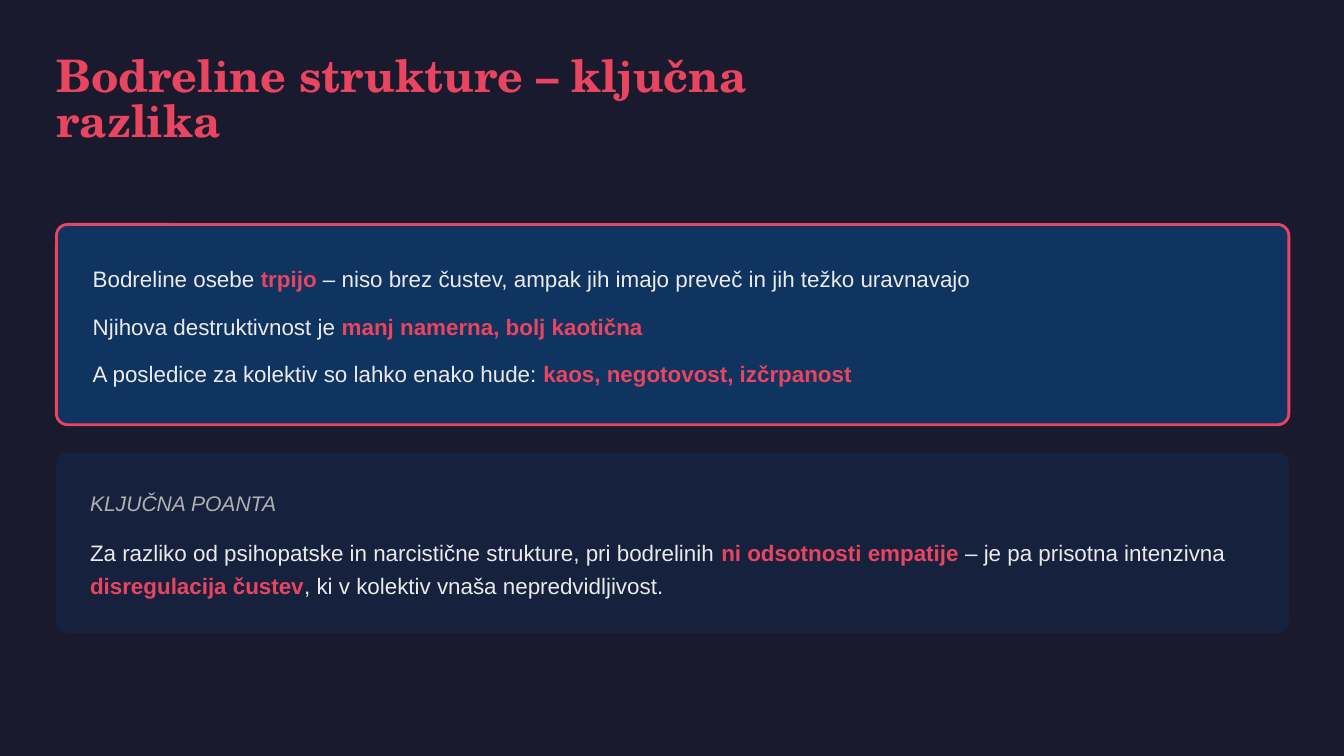
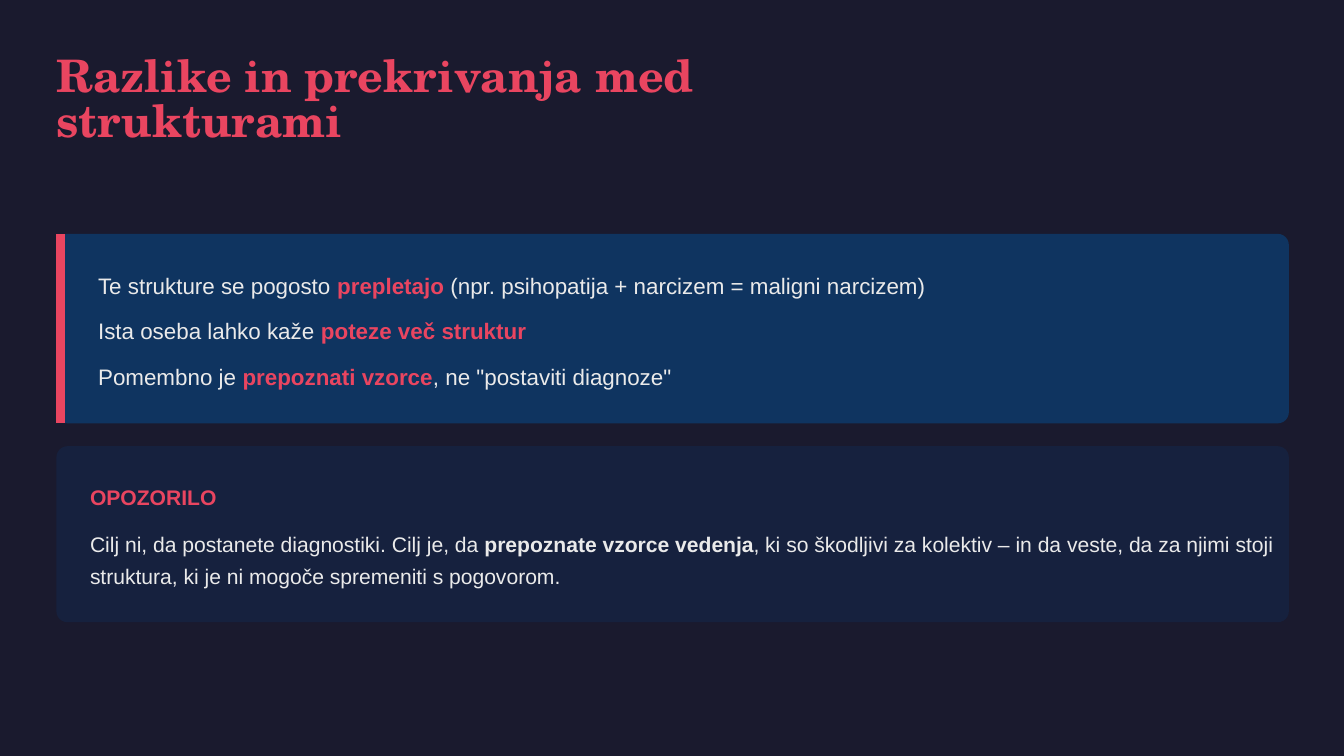
from pptx import Presentation
from pptx.dml.color import RGBColor as RGB
from pptx.enum.shapes import MSO_CONNECTOR as Link, MSO_SHAPE as Shape
from pptx.util import Inches, Pt
from lxml import etree

HUES = {"back": "1A1A2E", "red": "E94560", "blue": "0F3460",
        "navy": "16213E", "light": "EAEAEA", "grey": "B0B0B0"}
LEFT, WIDE, RADIUS = 0.42, 9.17, 0.083

# Widescreen 16:9
deck = Presentation()
deck.slide_width = Inches(10)
deck.slide_height = Inches(10 * 9 / 16)


def write(slide, box, text, size, lead, after=0, hue="light", mark="red", face="Arial"):
    """Add a text box; parts between asterisks are bold in the mark colour."""
    frame = slide.shapes.add_textbox(*map(Inches, box)).text_frame
    frame.word_wrap = True
    frame.margin_left = frame.margin_right = 0
    frame.margin_top = frame.margin_bottom = 0
    para = frame.paragraphs[0]
    para.line_spacing, para.space_after = Pt(lead), Pt(after)
    para.font.name, para.font.size = face, Pt(size)
    for i, part in enumerate(text.split("*")):
        if part:
            run = para.add_run()
            run.text = part
            run.font.bold = i % 2 == 1
            run.font.color.rgb = RGB.from_string(HUES[mark if i % 2 else hue])
    return para


def card(slide, top, high, hue):
    """Add a full-width rounded panel."""
    box = slide.shapes.add_shape(
        Shape.ROUNDED_RECTANGLE, *map(Inches, (LEFT, top, WIDE, high)))
    box.adjustments[0] = RADIUS / high
    box.shadow.inherit = False
    box.fill.solid()
    box.fill.fore_color.rgb = RGB.from_string(HUES[hue])
    box.line.fill.background()
    return box


pages = [
    {"title": "Bodreline strukture – ključna razlika", "width": 5.42,
     "card": (1.67, 1.49), "text": (0.69, 1.94, 8.8), "last": 2.65, "after": 9,
     "lines": [
         "Bodreline osebe *trpijo* – niso brez čustev, ampak jih imajo preveč in jih težko uravnavajo",
         "Njihova destruktivnost je *manj namerna, bolj kaotična*",
         "A posledice za kolektiv so lahko enako hude: *kaos, negotovost, izčrpanost*"],
     "note": (3.37, 1.34), "head": "KLJUČNA POANTA",
     "size": 12, "lead": 18, "high": 0.5, "mark": "red",
     "body": "Za razliko od psihopatske in narcistične strukture, pri bodrelinih "
             "*ni odsotnosti empatije* – je pa prisotna intenzivna "
             "*disregulacija čustev*, ki v kolektiv vnaša nepredvidljivost."},
    {"title": "Razlike in prekrivanja med strukturami", "width": 5.85,
     "card": (1.74, 1.41), "text": (0.73, 1.99, 8.78), "last": 2.67, "after": 7.5,
     "lines": [
         "Te strukture se pogosto *prepletajo* (npr. psihopatija + narcizem = maligni narcizem)",
         "Ista oseba lahko kaže *poteze več struktur*",
         "Pomembno je *prepoznati vzorce*, ne \"postaviti diagnoze\""],
     "note": (3.32, 1.31), "head": "*OPOZORILO*",
     "size": 11.25, "lead": 16.9, "high": 0.47, "mark": "light",
     "body": "Cilj ni, da postanete diagnostiki. Cilj je, da "
             "*prepoznate vzorce vedenja*, ki so škodljivi za kolektiv – in da veste, "
             "da za njimi stoji struktura, ki je ni mogoče spremeniti s pogovorom."},
]

for num, page in enumerate(pages):
    slide = deck.slides.add_slide(deck.slide_layouts[6])
    slide.background.fill.solid()
    slide.background.fill.fore_color.rgb = RGB.from_string(HUES["back"])

    # Title
    write(slide, (LEFT, 0.42, page["width"], 0.33), f"*{page['title']}*",
          24, 24, 18, face="TeX Gyre Schola")

    # Main card: red outline on the first slide, red left bar on the second
    top, high = page["card"]
    main = card(slide, top, high, "blue")
    if num == 0:
        edge = main.line
    else:
        bar = slide.shapes.add_connector(
            Link.STRAIGHT, *map(Inches, (0.45, top, 0.45, top + high)))
        etree.SubElement(
            bar._element.spPr,
            "{http://schemas.openxmlformats.org/drawingml/2006/main}effectLst")
        edge = bar.line
    edge.color.rgb = RGB.from_string(HUES["red"])
    edge.width = Pt(4.5 if num else 1.5)

    # Statements, evenly spaced
    left, first, width = page["text"]
    step = (page["last"] - first) / 2
    for i, line in enumerate(page["lines"]):
        write(slide, (left, first + i * step, width, 0.23), line, 12, 16.8,
              page["after"] if i < 2 else 0)

    # Note card
    top, high = page["note"]
    card(slide, top, high, "navy")
    head = write(slide, (0.67, top + 0.25, 8.84, 0.22), page["head"],
                 11.25, 15.8, 9, "grey")
    head.font.italic = num == 0
    write(slide, (0.67, top + 0.59, 8.84, page["high"]), page["body"],
          page["size"], page["lead"], mark=page["mark"])

deck.save("out.pptx")
